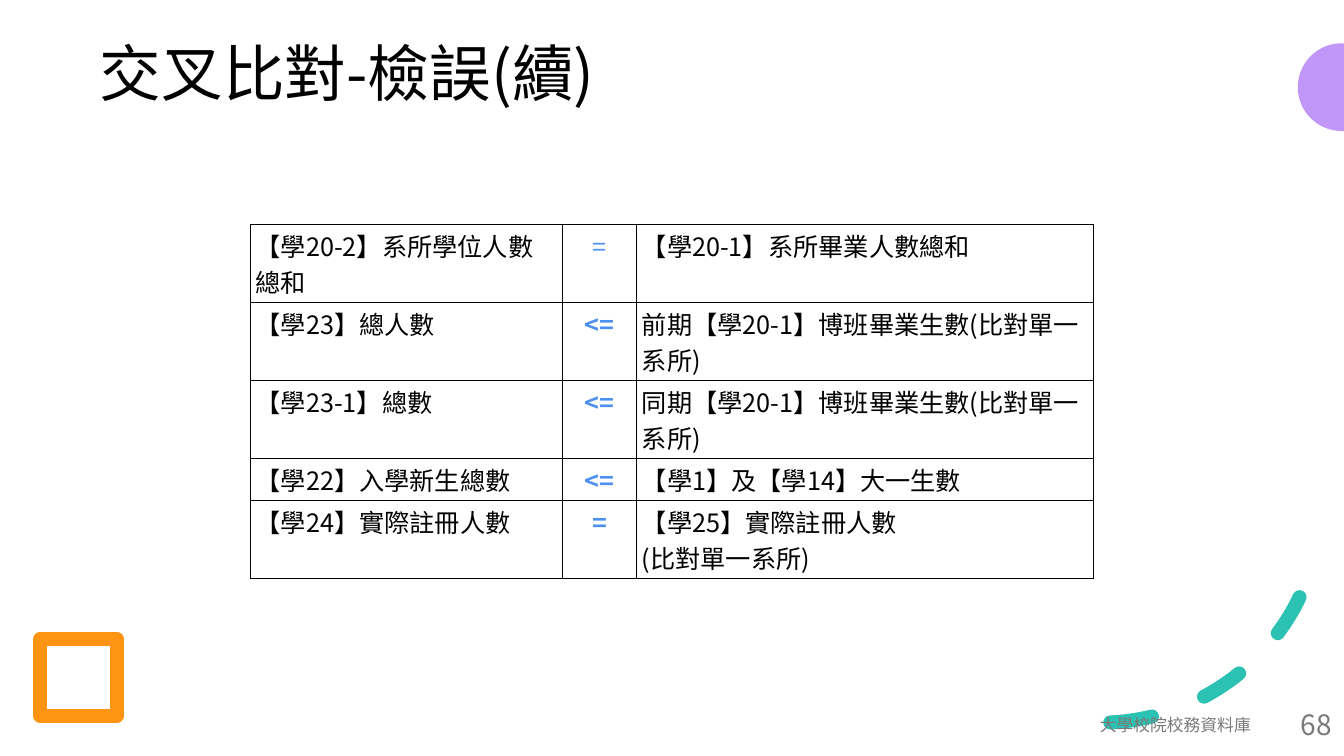
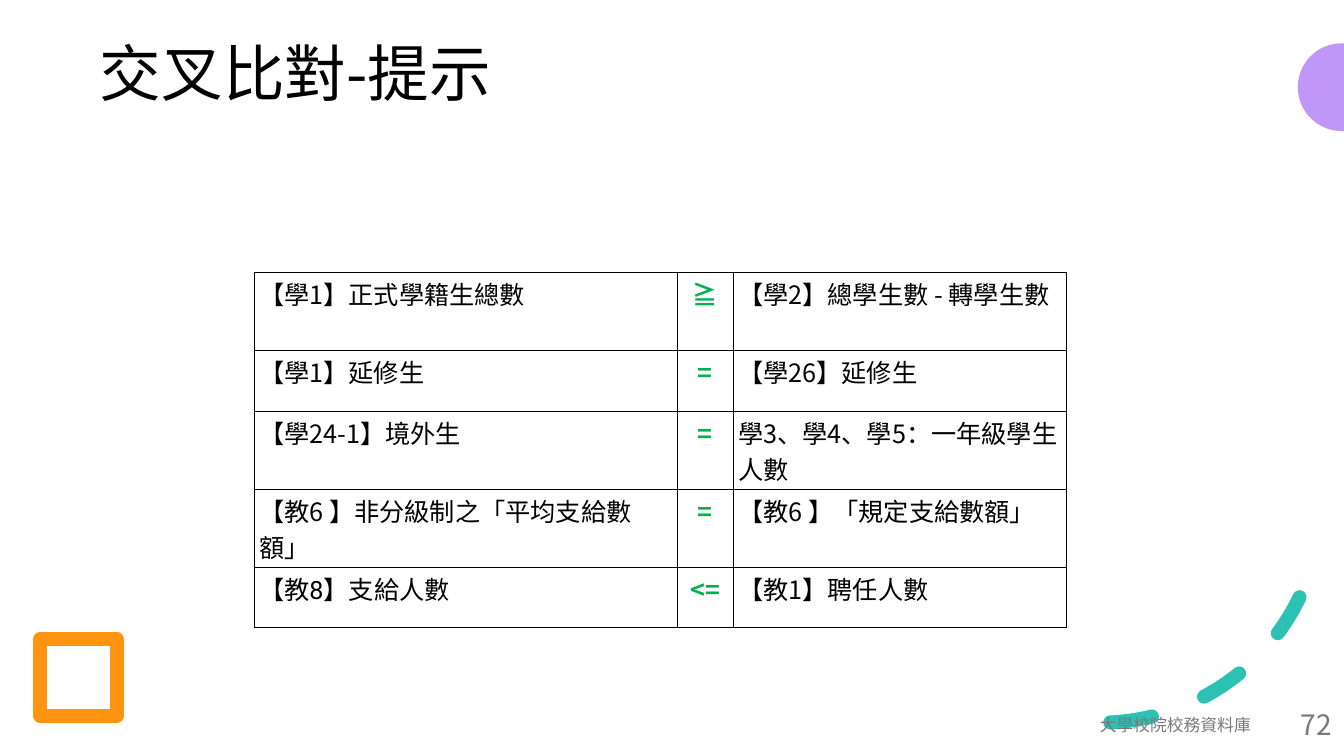
from math import cos, pi, sin

from lxml.etree import SubElement
from pptx import Presentation
from pptx.dml.color import RGBColor
from pptx.enum.dml import MSO_LINE
from pptx.enum.shapes import MSO_SHAPE
from pptx.enum.text import MSO_ANCHOR, PP_ALIGN
from pptx.oxml.ns import qn
from pptx.util import Inches, Pt

BLACK = RGBColor(0x00, 0x00, 0x00)
GREY = RGBColor(0x79, 0x79, 0x79)
ORANGE = RGBColor(0xFF, 0x94, 0x13)
TEAL = RGBColor(0x2B, 0xC2, 0xB4)
PURPLE = RGBColor(0xC0, 0x97, 0xF8)
BLUE = RGBColor(0x4D, 0x90, 0xEF)
GREEN = RGBColor(0x00, 0xB0, 0x50)
FONT = "Noto Sans CJK TC"
LATIN = "Roboto"

deck = Presentation()
deck.slide_width = Inches(13.33)
deck.slide_height = Inches(7.5)
COL = deck.slide_width / 100
ROW = deck.slide_height / 100
SLIM, MID, TALL = 5.55, 8, 10.32


def grid(left, top, wide, high):
    return int(left * COL), int(top * ROW), int(wide * COL), int(high * ROW)


def write(para, text, size, color, bold=False, face=FONT):
    for i, line in enumerate(text.split("\n")):
        if i:
            para.add_line_break()
        run = para.add_run()
        run.text = line
        run.font.size = Pt(size)
        run.font.bold = bold
        run.font.color.rgb = color
        run.font.name = face
        SubElement(run.font._element, qn("a:ea"), typeface=FONT)


pages = [
    {
        "title": "交叉比對-檢誤(續)",
        "number": "68",
        "place": (18.65, 29.7),
        "cols": [23.18, 5.55, 33.98],
        "rows": [TALL, TALL, TALL, SLIM, TALL],
        "color": BLUE,
        "plain": [0],
        "latin": [],
        "cells": [
            ("【學20-2】系所學位人數總和", "=", "【學20-1】系所畢業人數總和"),
            ("【學23】總人數", "<=", "前期【學20-1】博班畢業生數(比對單一系所)"),
            ("【學23-1】總數", "<=", "同期【學20-1】博班畢業生數(比對單一系所)"),
            ("【學22】入學新生總數", "<=", "【學1】及【學14】大一生數"),
            ("【學24】實際註冊人數", "=", "【學25】實際註冊人數\n(比對單一系所)"),
        ],
    },
    {
        "title": "交叉比對-提示",
        "number": "72",
        "place": (18.9, 36.1),
        "cols": [31.5, 4.15, 24.78],
        "rows": [TALL, MID, TALL, TALL, MID],
        "color": GREEN,
        "plain": [],
        "latin": [4],
        "cells": [
            ("【學1】正式學籍生總數", "≧", "【學2】總學生數 - 轉學生數"),
            ("【學1】延修生", "=", "【學26】延修生"),
            ("【學24-1】境外生", "=", "學3、學4、學5：一年級學生人數"),
            ("【教6 】非分級制之「平均支給數額」", "=", "【教6 】「規定支給數額」"),
            ("【教8】支給人數", "<=", "【教1】聘任人數"),
        ],
    },
]

for page in pages:
    slide = deck.slides.add_slide(deck.slide_layouts[6])
    shapes = slide.shapes

    frame = shapes.add_shape(MSO_SHAPE.RECTANGLE, *grid(3, 84.53, 5.7, 10.13))
    arc = shapes.add_shape(MSO_SHAPE.ARC, *grid(65.33, 36.93, 33, 58.67))
    for shape, color in ((frame, ORANGE), (arc, TEAL)):
        shape.shadow.inherit = False
        shape.fill.background()
        shape.line.color.rgb = color
        shape.line.width = Pt(10)
    arc.adjustments[0] = 162
    arc.adjustments[1] = 200.93
    arc.rotation = 357.3
    arc.line.dash_style = MSO_LINE.DASH
    arc._element.spPr.find(qn("a:xfrm")).set("flipV", "1")
    arc._element.spPr.find(qn("a:ln")).set("cap", "rnd")
    for shape in (frame, arc):
        SubElement(shape._element.spPr.find(qn("a:ln")), qn("a:round"))

    midx, midy, size = 99.83 * COL, 11.53 * ROW, 5.8 * ROW
    turns = [pi / 2 + pi * i / 48 for i in range(49)]
    curve = [(midx + size * cos(t), midy - size * sin(t)) for t in turns]
    edge = [(100 * COL, midy + size), (100 * COL, midy - size)]
    pen = shapes.build_freeform(*map(int, curve[0]))
    pen.add_line_segments([(int(x), int(y)) for x, y in curve[1:] + edge])
    disc = pen.convert_to_shape()
    disc.shadow.inherit = False
    disc.fill.solid()
    disc.fill.fore_color.rgb = PURPLE
    disc.line.fill.background()

    labels = [
        (page["title"], (6.9, 5.33, 86.25, 19.33), 44, BLACK,
         PP_ALIGN.LEFT, MSO_ANCHOR.TOP, 0.07, 0.03, 0.9),
        ("大學校院校務資料庫", (51.45, 93.2, 42.53, 5.33), 12, GREY,
         PP_ALIGN.RIGHT, MSO_ANCHOR.MIDDLE, 0.12, 0.06, 1.0),
        (page["number"], (95.03, 93.2, 4.95, 5.33), 20, GREY,
         PP_ALIGN.RIGHT, MSO_ANCHOR.MIDDLE, 0.12, 0.06, 1.0),
    ]

    left, top = page["place"]
    area = grid(left, top, sum(page["cols"]), sum(page["rows"]))
    table = shapes.add_table(len(page["rows"]), len(page["cols"]), *area).table
    table.first_row = False
    table.horz_banding = False
    for col, wide in zip(table.columns, page["cols"]):
        col.width = int(wide * COL)
    for row, high in zip(table.rows, page["rows"]):
        row.height = int(high * ROW)
    for r, texts in enumerate(page["cells"]):
        for c, text in enumerate(texts):
            cell = table.cell(r, c)
            cell.margin_left = cell.margin_right = Inches(0.05)
            cell.margin_top = cell.margin_bottom = Pt(1.8)
            props = cell._tc.get_or_add_tcPr()
            for side in ("a:lnL", "a:lnR", "a:lnT", "a:lnB"):
                line = SubElement(props, qn(side), w=str(Pt(0.75)))
                fill = SubElement(line, qn("a:solidFill"))
                SubElement(fill, qn("a:srgbClr"), val=str(BLACK))
            cell.fill.background()
            para = cell.text_frame.paragraphs[0]
            if c == 1:
                para.alignment = PP_ALIGN.CENTER
                write(para, text, 18, page["color"], r not in page["plain"])
            else:
                face = LATIN if c == 0 and r in page["latin"] else FONT
                write(para, text, 18, BLACK, face=face)

    for text, area, size, color, align, anchor, padx, pady, gap in labels:
        body = shapes.add_textbox(*grid(*area)).text_frame
        body.word_wrap = True
        body.vertical_anchor = anchor
        body.margin_left = body.margin_right = Inches(padx)
        body.margin_top = body.margin_bottom = Inches(pady)
        para = body.paragraphs[0]
        para.alignment = align
        para.line_spacing = gap
        write(para, text, size, color)

deck.save("out.pptx")
